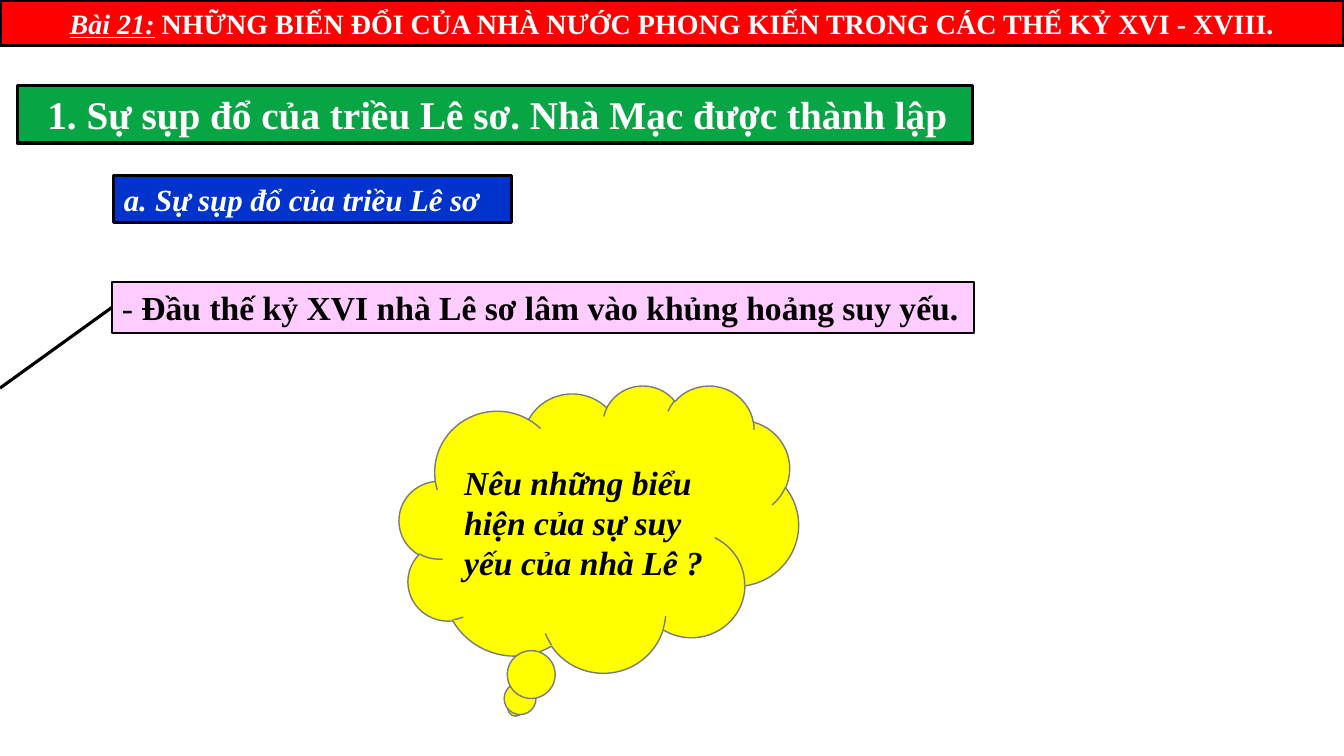
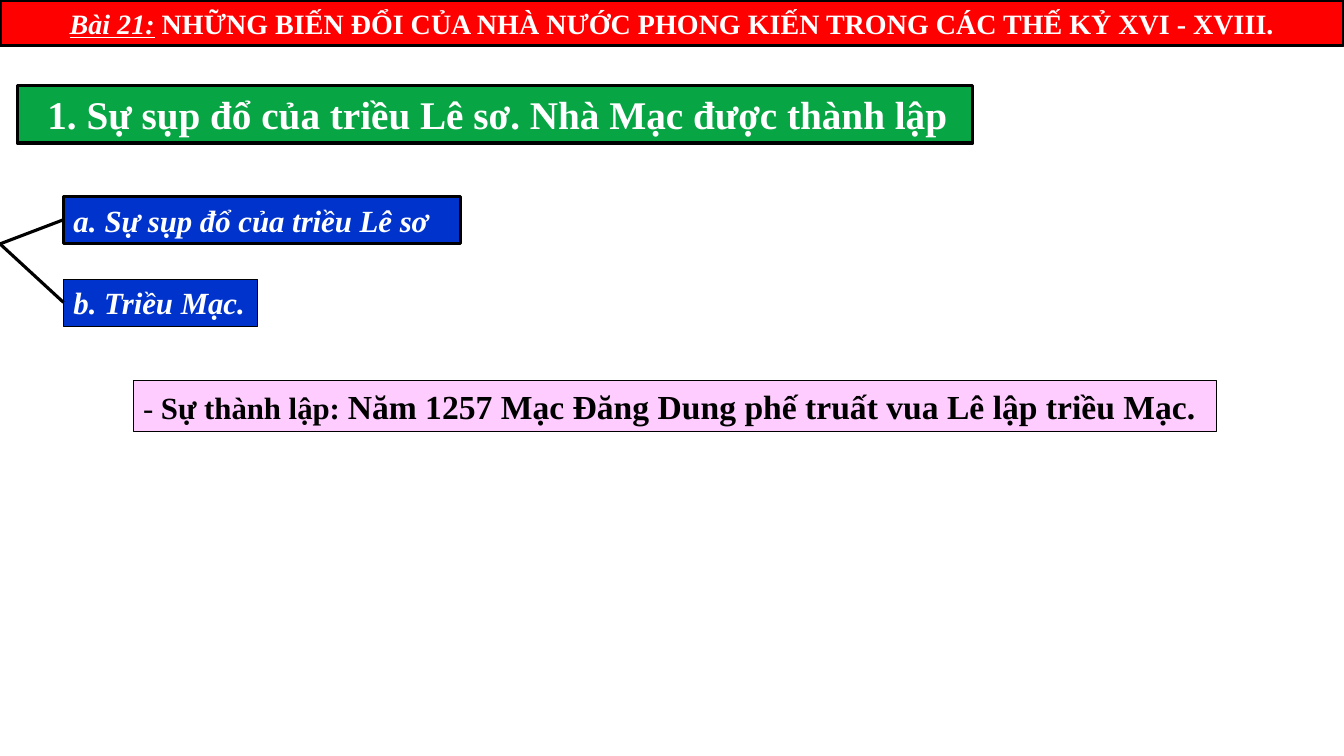
from dataclasses import dataclass

from lxml.etree import SubElement
from pptx import Presentation
from pptx.dml.color import RGBColor
from pptx.enum.shapes import MSO_CONNECTOR, MSO_SHAPE
from pptx.enum.text import MSO_ANCHOR, PP_ALIGN
from pptx.oxml.ns import qn
from pptx.util import Inches, Pt

# Shared palette and type
FONT = "Times New Roman"
BLACK, WHITE = "000000", "FFFFFF"
RED, GREEN, BLUE = "FF0000", "07A543", "0033CC"
PINK, YELLOW, GREY = "FFCCFF", "FFFF00", "7A7A7A"
INSET = 0.1
NUMBER_INDENT = 0.31


@dataclass
class Panel:
    left: float
    top: float
    width: float
    height: float
    fill: str
    border: float = 2.25
    border_color: str = BLACK
    shape: MSO_SHAPE = MSO_SHAPE.RECTANGLE
    anchor: MSO_ANCHOR = MSO_ANCHOR.TOP
    inset: float = INSET
    wrap: bool = True


BANNER = Panel(0, 0, 13.33, 0.45, RED, anchor=MSO_ANCHOR.BOTTOM)
HEADING = Panel(0.17, 0.85, 9.48, 0.57, GREEN, inset=0.3)


def rgb(color: str) -> RGBColor:
    return RGBColor.from_string(color)


def add_panel(slide, panel: Panel):
    """Draw a panel and return its first paragraph."""
    shape = slide.shapes.add_shape(
        panel.shape, Inches(panel.left), Inches(panel.top),
        Inches(panel.width), Inches(panel.height))
    shape.shadow.inherit = False
    shape.fill.solid()
    shape.fill.fore_color.rgb = rgb(panel.fill)
    shape.line.color.rgb = rgb(panel.border_color)
    shape.line.width = Pt(panel.border)
    frame = shape.text_frame
    frame.word_wrap = panel.wrap
    frame.vertical_anchor = panel.anchor
    frame.margin_left = Inches(panel.inset)
    paragraph = frame.paragraphs[0]
    paragraph.alignment = PP_ALIGN.LEFT
    return paragraph


def add_text(paragraph, text: str, *, size: float, color: str = BLACK,
             bold: bool = True, italic: bool = False,
             underline: bool = False) -> None:
    run = paragraph.add_run()
    run.text = text
    font = run.font
    font.name, font.size = FONT, Pt(size)
    font.bold, font.italic, font.underline = bold, italic, underline
    font.color.rgb = rgb(color)


def add_branch(slide, start: tuple[float, float], end: tuple[float, float]) -> None:
    branch = slide.shapes.add_connector(
        MSO_CONNECTOR.STRAIGHT, *(Inches(value) for value in start + end))
    branch.line.color.rgb = rgb(BLACK)
    branch.line.width = Pt(2.25)
    SubElement(branch._element.spPr, qn("a:effectLst"))


def add_lesson_header(slide) -> None:
    banner = add_panel(slide, BANNER)
    banner.alignment = PP_ALIGN.CENTER
    banner.line_spacing = 0.9
    add_text(banner, "Bài 21:", size=20, color=WHITE, italic=True, underline=True)
    add_text(banner, " NHỮNG BIẾN ĐỔI CỦA NHÀ NƯỚC PHONG KIẾN "
             "TRONG CÁC THẾ KỶ XVI - XVIII.", size=20, color=WHITE)
    heading = add_panel(slide, HEADING)
    add_text(heading, "1. Sự sụp đổ của triều Lê sơ. Nhà Mạc được thành lập",
             size=28, color=WHITE)


def add_section_a(slide, left: float, top: float) -> None:
    section = add_panel(slide, Panel(left, top, 3.94, 0.47, BLUE))
    properties = section._p.get_or_add_pPr()
    properties.set("marL", str(Inches(NUMBER_INDENT)))
    properties.set("indent", str(-Inches(NUMBER_INDENT)))
    SubElement(properties, qn("a:buFont"), typeface=FONT)
    SubElement(properties, qn("a:buAutoNum"), type="alphaLcPeriod")
    add_text(section, "Sự sụp đổ của triều Lê sơ", size=22, color=WHITE, italic=True)


def build_le_decline(slide) -> None:
    add_lesson_header(slide)
    crisis = add_panel(slide, Panel(1.11, 2.8, 8.55, 0.5, PINK, border=1.5))
    add_text(crisis, "-", size=24, bold=False)
    add_text(crisis, " Đầu thế kỷ XVI nhà Lê sơ lâm vào khủng hoảng suy yếu.", size=24)

    # Question for the class
    question = add_panel(slide, Panel(
        3.96, 3.82, 3.96, 2.85, YELLOW, border=1, border_color=GREY,
        shape=MSO_SHAPE.CLOUD_CALLOUT, anchor=MSO_ANCHOR.MIDDLE))
    add_text(question, "Nêu những biểu hiện của sự suy yếu của nhà Lê ?",
             size=24, italic=True)

    add_branch(slide, (0, 3.85), (1.11, 3.05))
    add_section_a(slide, 1.13, 1.74)


def build_mac_dynasty(slide) -> None:
    # Sections a and b with their branches
    section_b = add_panel(slide, Panel(0.63, 2.77, 1.92, 0.47, BLUE,
                                       border=0.75, wrap=False))
    add_text(section_b, "b. Triều Mạc.", size=22, color=WHITE, italic=True)
    add_section_a(slide, 0.63, 1.95)
    for section_middle in (2.18, 3):
        add_branch(slide, (0, 2.42), (0.63, section_middle))

    founding = add_panel(slide, Panel(1.32, 3.78, 10.75, 0.5, PINK,
                                      border=0.75, wrap=False))
    add_text(founding, "- ", size=22, bold=False)
    add_text(founding, "Sự thành lập: ", size=22)
    add_text(founding, "Năm 1257 Mạc Đăng Dung phế truất vua Lê lập triều Mạc.", size=24)
    add_lesson_header(slide)


def main() -> None:
    presentation = Presentation()
    presentation.slide_width = Inches(13.33)
    presentation.slide_height = Inches(7.5)
    blank = presentation.slide_layouts[6]
    for build in (build_le_decline, build_mac_dynasty):
        build(presentation.slides.add_slide(blank))
    presentation.save("out.pptx")


if __name__ == "__main__":
    main()
